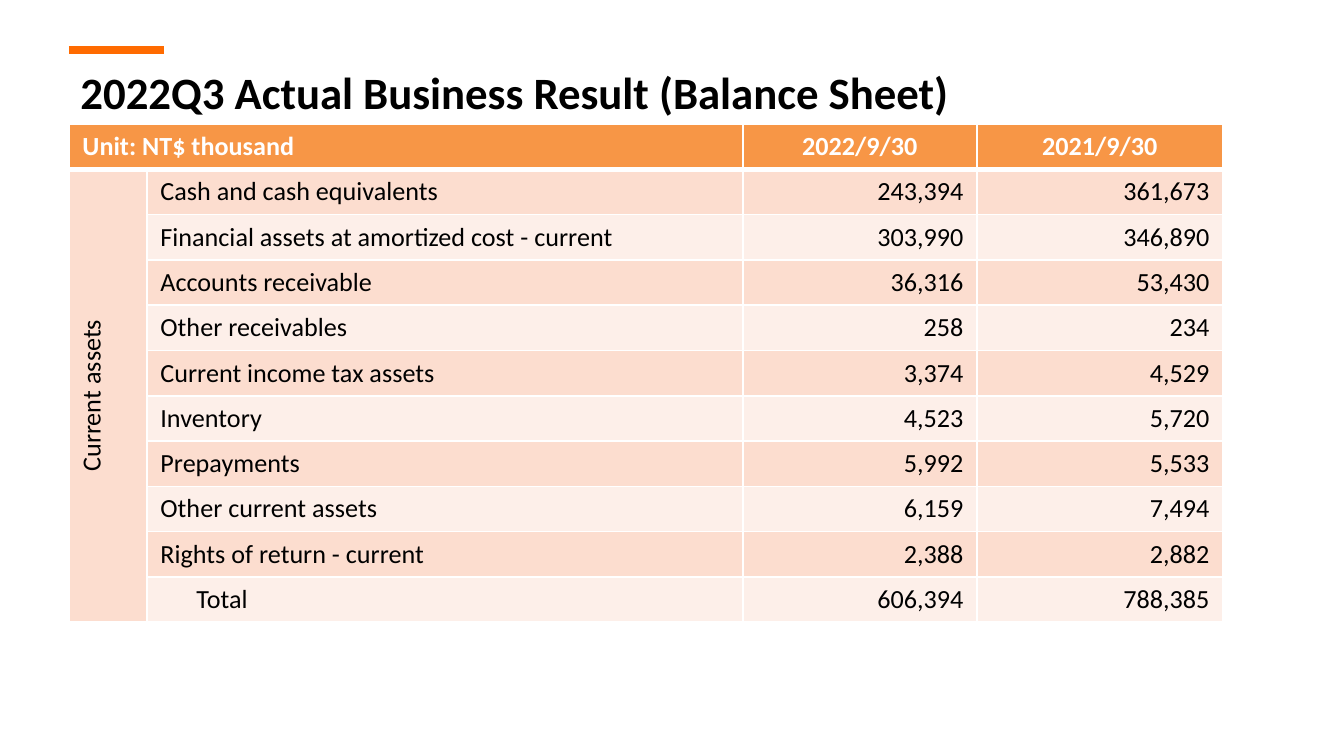
from dataclasses import dataclass

from lxml import etree
from pptx import Presentation
from pptx import util as u
from pptx.dml.color import RGBColor
from pptx.enum import shapes, text
from pptx.oxml import ns

PX = 914400 / 134.4
LEFT, CENTER, RIGHT = text.PP_ALIGN.LEFT, text.PP_ALIGN.CENTER, text.PP_ALIGN.RIGHT
COLUMNS = (78, 596, 234, 246)
ROW_HEIGHT = 45
TOTAL_INDENT = 36

HEADINGS = ("Unit: NT$ thousand", "2022/9/30", "2021/9/30")
CATEGORY = "Current assets"
ASSETS = (
    ("Cash and cash equivalents", "243,394", "361,673"),
    ("Financial assets at amortized cost - current", "303,990", "346,890"),
    ("Accounts receivable", "36,316", "53,430"),
    ("Other receivables", "258", "234"),
    ("Current income tax assets", "3,374", "4,529"),
    ("Inventory", "4,523", "5,720"),
    ("Prepayments", "5,992", "5,533"),
    ("Other current assets", "6,159", "7,494"),
    ("Rights of return - current", "2,388", "2,882"),
    ("Total", "606,394", "788,385"),
)


@dataclass(frozen=True)
class Theme:
    """Hold the colours, font and type sizes of the slide."""
    font: str = "Calibri"
    title_size: int = 24
    table_size: int = 14
    ink: str = "000000"
    paper: str = "FFFFFF"
    accent: str = "FF6B00"
    header: str = "F79646"
    bands: tuple = ("FCDDCF", "FDEFE9")


THEME = Theme()


def px(length):
    """Turn pixels into EMU."""
    return u.Emu(round(length * PX))


def rgb(colour):
    """Turn a hex string into a colour."""
    return RGBColor.from_string(colour)


def write(paragraph, words, size, colour, bold=False, align=LEFT):
    """Add one formatted run to a paragraph."""
    paragraph.alignment = align
    run = paragraph.add_run()
    run.text = words
    run.font.name = THEME.font
    run.font.size = u.Pt(size)
    run.font.bold = bold
    run.font.color.rgb = rgb(colour)


def add_title(slide, words):
    """Place and fill the title placeholder."""
    title = slide.shapes.title
    title.left, title.top, title.width, title.height = map(px, (67, 50, 1293, 84))
    frame = title.text_frame
    frame.word_wrap = True
    frame.auto_size = text.MSO_AUTO_SIZE.NONE
    frame.vertical_anchor = text.MSO_ANCHOR.MIDDLE
    write(frame.paragraphs[0], words, THEME.title_size, THEME.ink, bold=True)


def add_accent(slide):
    """Draw the short rule above the title."""
    rule = slide.shapes.add_connector(
        shapes.MSO_CONNECTOR.STRAIGHT, px(69), px(50), px(164), px(50))
    rule.line.color.rgb = rgb(THEME.accent)
    rule.line.width = u.Pt(4.5)
    etree.SubElement(rule._element.spPr, ns.qn("a:effectLst"))


def style_cell(cell, fill, bottom=1):
    """Give a cell white borders and a plain fill."""
    properties = cell._tc.get_or_add_tcPr()
    for side, width in (("L", 1), ("R", 1), ("T", 1), ("B", bottom)):
        border = etree.SubElement(properties, ns.qn(f"a:ln{side}"), w=str(u.Pt(width)))
        solid = etree.SubElement(border, ns.qn("a:solidFill"))
        etree.SubElement(solid, ns.qn("a:srgbClr"), val=THEME.paper)
    cell.fill.solid()
    cell.fill.fore_color.rgb = rgb(fill)


def fill_cell(cell, words, colour=THEME.ink, bold=False, align=LEFT):
    """Write the text of one table cell."""
    write(cell.text_frame.paragraphs[0], words, THEME.table_size, colour, bold, align)


def add_balance_sheet(slide):
    """Build the table of current assets."""
    rows = len(ASSETS) + 1
    sheet = slide.shapes.add_table(
        rows, len(COLUMNS), px(69), px(124), px(sum(COLUMNS)), px(rows * ROW_HEIGHT)).table
    for column, width in zip(sheet.columns, COLUMNS):
        column.width = px(width)
    for index, row in enumerate(sheet.rows):
        row.height = px(ROW_HEIGHT)
        for column, cell in enumerate(row.cells):
            if index == 0:
                style_cell(cell, THEME.header, bottom=3)
            else:
                style_cell(cell, THEME.bands[(index - 1) % 2 if column else 0])

    sheet.cell(0, 0).merge(sheet.cell(0, 1))
    for column, heading in zip((0, 2, 3), HEADINGS):
        fill_cell(sheet.cell(0, column), heading, THEME.paper, True,
                  CENTER if column else LEFT)

    category = sheet.cell(1, 0)
    category.merge(sheet.cell(rows - 1, 0))
    category.vertical_anchor = text.MSO_ANCHOR.MIDDLE
    category._tc.get_or_add_tcPr().set("vert", "vert270")
    fill_cell(category, CATEGORY, align=CENTER)

    for index, asset in enumerate(ASSETS, 1):
        for column, words in enumerate(asset, 1):
            fill_cell(sheet.cell(index, column), words, align=LEFT if column == 1 else RIGHT)
    total = sheet.cell(rows - 1, 1).text_frame.paragraphs[0]
    total._p.get_or_add_pPr().set("marL", str(px(TOTAL_INDENT)))


def main():
    """Build and save the balance sheet slide."""
    deck = Presentation()
    deck.slide_width, deck.slide_height = px(1344), px(756)
    slide = deck.slides.add_slide(deck.slide_layouts[5])
    add_accent(slide)
    add_title(slide, "2022Q3 Actual Business Result (Balance Sheet)")
    add_balance_sheet(slide)
    deck.save("out.pptx")


if __name__ == "__main__":
    main()
